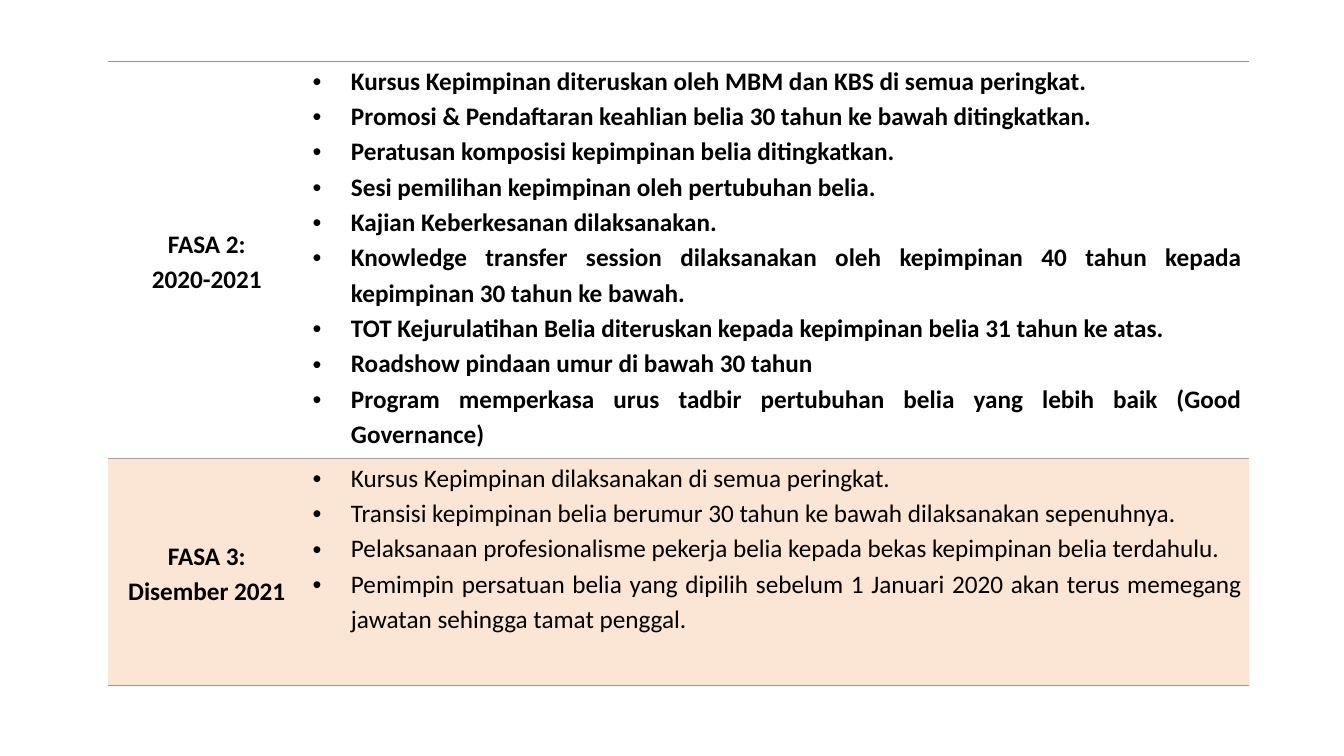
import lxml.etree
import pptx
import pptx.dml.color
import pptx.enum.text
import pptx.oxml.ns
import pptx.util

Inches = pptx.util.Inches
Pt = pptx.util.Pt
RGBColor = pptx.dml.color.RGBColor
qn = pptx.oxml.ns.qn
PP_ALIGN = pptx.enum.text.PP_ALIGN
MSO_ANCHOR = pptx.enum.text.MSO_ANCHOR

BLACK = RGBColor(0x00, 0x00, 0x00)
ORANGE = RGBColor(0xED, 0x7D, 0x31)
GREY = RGBColor(0xA5, 0xA5, 0xA5)
NO_STYLE = "{2D5ABB26-0587-4C30-8999-92F81FD0307C}"
COLUMN_SHARES = (1.96, 9.35)

PHASES = [
    {
        "label": ["FASA 2:", "2020-2021"],
        "actions": [
            "Kursus Kepimpinan diteruskan oleh MBM dan KBS di semua peringkat.",
            "Promosi & Pendaftaran keahlian belia 30 tahun ke bawah ditingkatkan.",
            "Peratusan komposisi kepimpinan belia ditingkatkan.",
            "Sesi pemilihan kepimpinan oleh pertubuhan belia.",
            "Kajian Keberkesanan dilaksanakan.",
            "Knowledge transfer session dilaksanakan oleh kepimpinan 40 tahun kepada "
            "kepimpinan 30 tahun ke bawah.",
            "TOT Kejurulatihan Belia diteruskan kepada kepimpinan belia 31 tahun ke atas.",
            "Roadshow pindaan umur di bawah 30 tahun",
            "Program memperkasa urus tadbir pertubuhan belia yang lebih baik (Good Governance)",
        ],
        "bold": True,
        "tinted": False,
        "share": 3.94,
        "borders": {"lnT": ORANGE, "lnB": GREY},
    },
    {
        "label": ["FASA 3:", "Disember 2021"],
        "actions": [
            "Kursus Kepimpinan dilaksanakan di semua peringkat.",
            "Transisi kepimpinan belia berumur 30 tahun ke bawah dilaksanakan sepenuhnya.",
            "Pelaksanaan profesionalisme pekerja belia kepada bekas kepimpinan belia terdahulu.",
            "Pemimpin persatuan belia yang dipilih sebelum 1 Januari 2020 akan terus memegang "
            "jawatan sehingga tamat penggal.",
        ],
        "bold": False,
        "tinted": True,
        "share": 2.25,
        "borders": {"lnT": GREY, "lnB": ORANGE},
    },
]


def style_cell(cell, tinted, borders):
    """Set the margins, the fill and the horizontal borders of a cell."""
    cell.margin_left = cell.margin_right = Inches(0.07)
    cell.margin_top = cell.margin_bottom = 0
    properties = cell._tc.get_or_add_tcPr()
    if tinted:
        cell.fill.solid()
        cell.fill.fore_color.rgb = ORANGE
        color = properties.find(".//" + qn("a:srgbClr"))
        lxml.etree.SubElement(color, qn("a:alpha"), val="20000")
    else:
        cell.fill.background()
    for position, (side, border_color) in enumerate(borders.items()):
        line = lxml.etree.Element(qn("a:" + side), w=str(Pt(1)))
        fill = lxml.etree.SubElement(line, qn("a:solidFill"))
        lxml.etree.SubElement(fill, qn("a:srgbClr"), val=str(border_color))
        properties.insert(position, line)


def add_bullet(paragraph):
    """Give a paragraph a hanging bullet and its tab stops."""
    properties = paragraph._p.get_or_add_pPr()
    properties.set("marL", str(Inches(0.38)))
    properties.set("indent", str(Inches(-0.38)))
    lxml.etree.SubElement(properties, qn("a:buFont"), typeface="Arial")
    lxml.etree.SubElement(properties, qn("a:buChar"), char="•")
    tabs = lxml.etree.SubElement(properties, qn("a:tabLst"))
    for stop in (0.18, 0.31):
        lxml.etree.SubElement(tabs, qn("a:tab"), pos=str(Inches(stop)), algn="l")


def write_cell(cell, lines, bold, bulleted):
    """Write one paragraph per line, centred or as justified bullets."""
    frame = cell.text_frame
    for index, text in enumerate(lines):
        paragraph = frame.add_paragraph() if index else frame.paragraphs[0]
        paragraph.text = text
        if bulleted:
            add_bullet(paragraph)
        paragraph.alignment = PP_ALIGN.JUSTIFY if bulleted else PP_ALIGN.CENTER
        paragraph.line_spacing = 1.15
        paragraph.font.name = "Calibri"
        paragraph.font.size = Pt(18)
        paragraph.font.bold = bold
        paragraph.font.color.rgb = BLACK


def add_phase_table(slide, left, top, width, height):
    """Add the table of phases and their actions within the given box."""
    frame = slide.shapes.add_table(len(PHASES), len(COLUMN_SHARES), left, top, width, height)
    table = frame.table
    table.first_row = table.horz_banding = False
    table._tbl.tblPr.find(qn("a:tableStyleId")).text = NO_STYLE
    for column, share in zip(table.columns, COLUMN_SHARES):
        column.width = int(width * share / sum(COLUMN_SHARES))
    total = sum(phase["share"] for phase in PHASES)
    for row, phase in zip(table.rows, PHASES):
        row.height = int(height * phase["share"] / total)
        label_cell, action_cell = row.cells
        for cell in (label_cell, action_cell):
            style_cell(cell, phase["tinted"], phase["borders"])
        label_cell.vertical_anchor = MSO_ANCHOR.MIDDLE
        write_cell(label_cell, phase["label"], True, False)
        write_cell(action_cell, phase["actions"], phase["bold"], True)


def main():
    """Build the slide and save the presentation."""
    presentation = pptx.Presentation()
    presentation.slide_width = Inches(13.33)
    presentation.slide_height = Inches(7.5)
    slide = presentation.slides.add_slide(presentation.slide_layouts[6])
    add_phase_table(slide, Inches(1.07), Inches(0.61), Inches(11.32), Inches(6.19))
    presentation.save("out.pptx")


if __name__ == "__main__":
    main()
